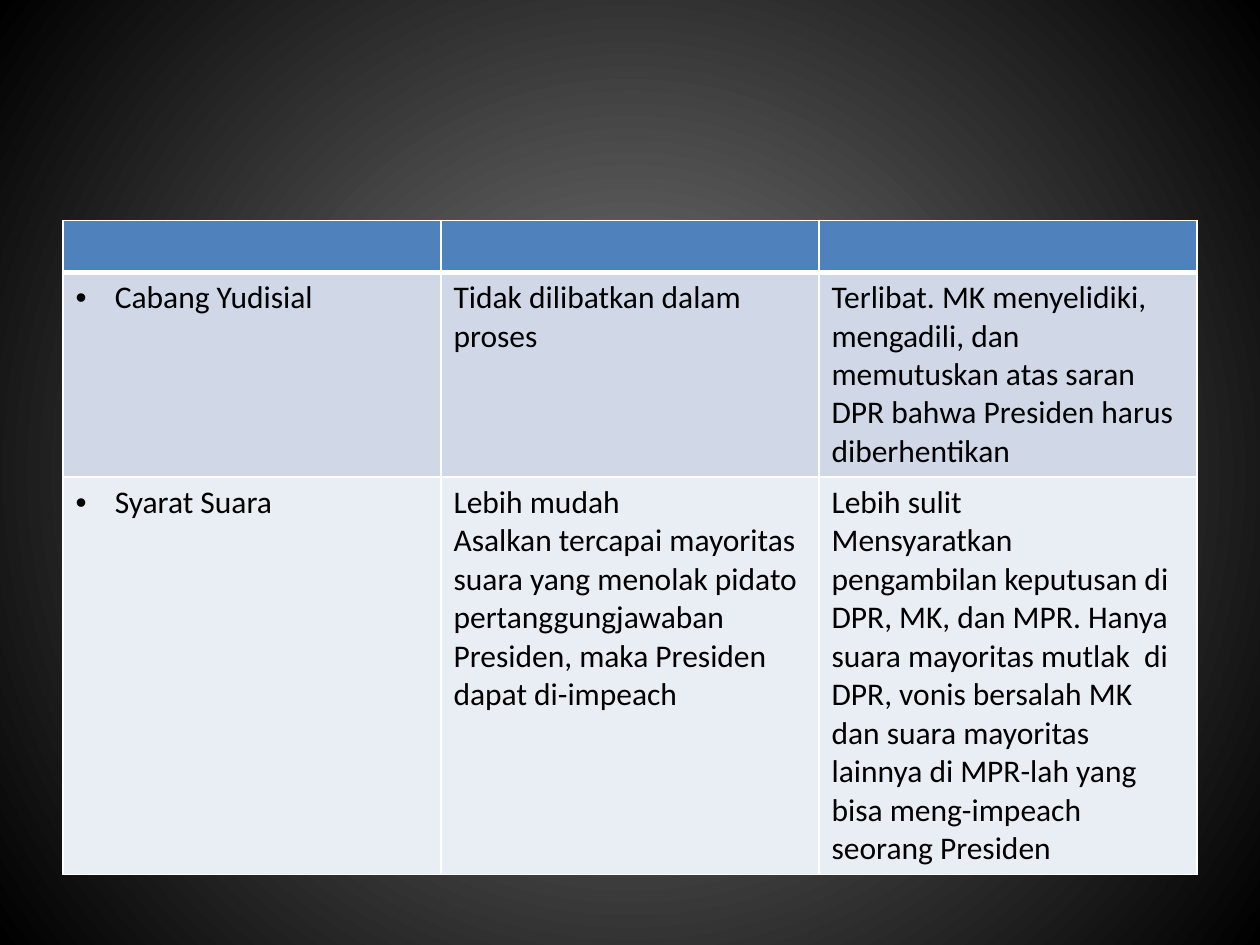
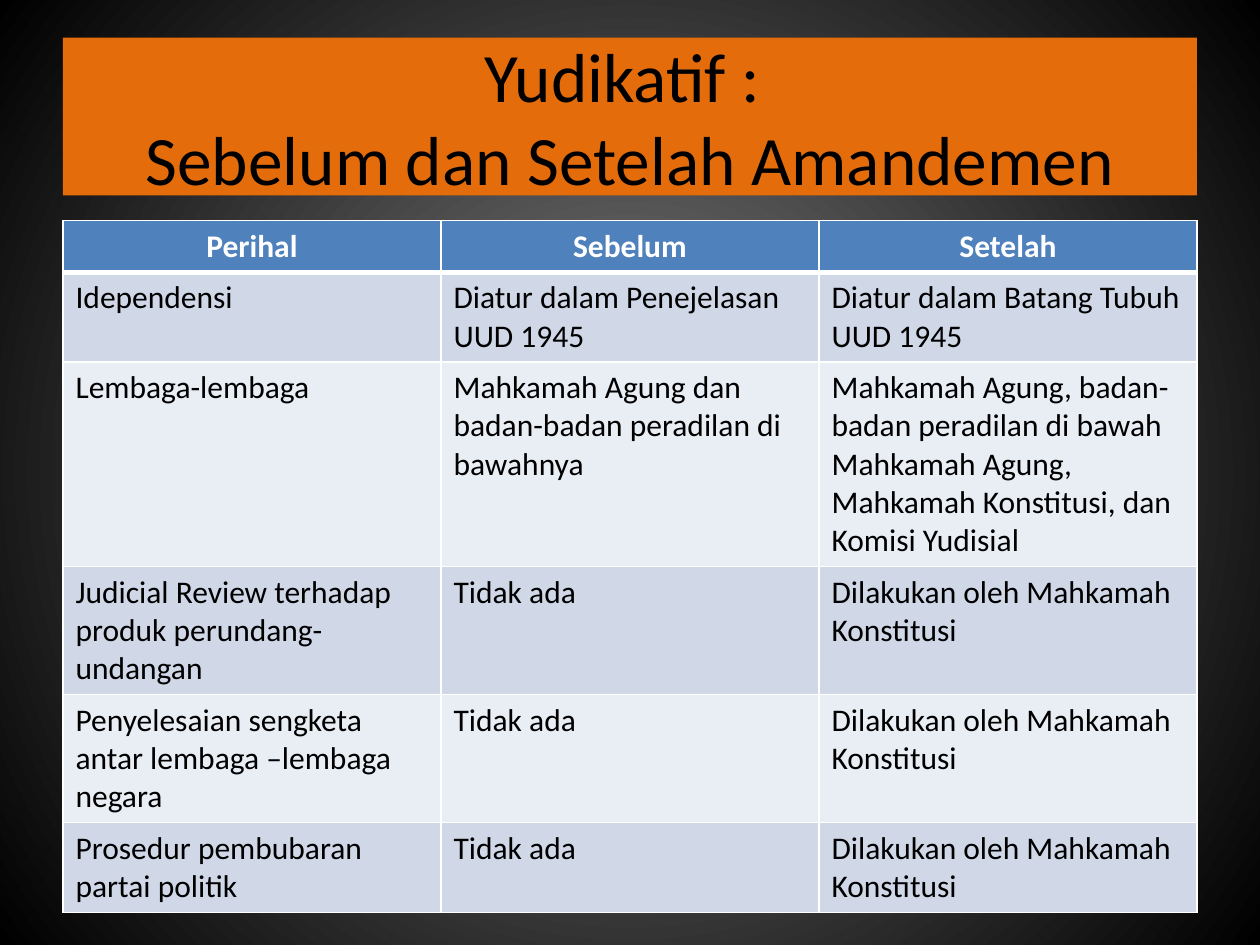
from lxml import etree
from pptx import Presentation
from pptx.dml.color import RGBColor
from pptx.enum.shapes import MSO_SHAPE
from pptx.enum.text import MSO_ANCHOR, PP_ALIGN
from pptx.oxml import parse_xml
from pptx.oxml.ns import nsdecls, qn
from pptx.util import Cm, Pt

RECTANGLE = MSO_SHAPE.RECTANGLE
MIDDLE = MSO_ANCHOR.MIDDLE
CENTER = PP_ALIGN.CENTER
LEFT = PP_ALIGN.LEFT

BLACK = RGBColor(0x00, 0x00, 0x00)
WHITE = RGBColor(0xFF, 0xFF, 0xFF)
GLOW_GRAY = RGBColor(0x7F, 0x7F, 0x7F)
TITLE_ORANGE = RGBColor(0xE4, 0x6C, 0x0A)
HEADER_BLUE = RGBColor(0x4F, 0x81, 0xBD)
BAND_COLORS = (RGBColor(0xD0, 0xD8, 0xE8), RGBColor(0xE9, 0xED, 0xF4))

FONT = "Calibri"
TITLE_SIZE = Pt(39.6)
TABLE_SIZE = Pt(18)
ROW_HEIGHT = Cm(1.04)
BULLET_INDENT = Cm(0.79)
TITLE_BOX = (Cm(1.27), Cm(0.76), Cm(22.86), Cm(3.18))
TABLE_BOX = (Cm(1.27), Cm(4.45), Cm(22.86))

IMPEACHMENT_ROWS = [
    ("", "", ""),
    ("Cabang Yudisial", "Tidak dilibatkan dalam proses",
     "Terlibat. MK menyelidiki, mengadili, dan memutuskan atas saran DPR "
     "bahwa Presiden harus diberhentikan"),
    ("Syarat Suara",
     "Lebih mudah\nAsalkan tercapai mayoritas suara yang menolak pidato "
     "pertanggungjawaban Presiden, maka Presiden dapat di-impeach",
     "Lebih sulit\nMensyaratkan  pengambilan keputusan di DPR, MK, dan MPR. "
     "Hanya suara mayoritas mutlak  di DPR, vonis bersalah MK dan suara "
     "mayoritas lainnya di MPR-lah yang bisa meng-impeach seorang Presiden"),
]

JUDICIARY_TITLE = "Yudikatif : \vSebelum dan Setelah Amandemen"
JUDICIARY_ROWS = [
    ("Perihal", "Sebelum", "Setelah"),
    ("Idependensi", "Diatur dalam Penejelasan UUD 1945",
     "Diatur dalam Batang Tubuh UUD 1945"),
    ("Lembaga-lembaga",
     "Mahkamah Agung dan badan-badan peradilan di bawahnya",
     "Mahkamah Agung, badan-badan peradilan di bawah Mahkamah Agung, "
     "Mahkamah Konstitusi, dan Komisi Yudisial"),
] + [
    (subject, "Tidak ada", "Dilakukan oleh Mahkamah Konstitusi")
    for subject in (
        "Judicial Review terhadap produk perundang-undangan",
        "Penyelesaian sengketa antar lembaga –lembaga negara",
        "Prosedur pembubaran partai politik",
    )
]


def format_paragraph(paragraph, size, color, alignment, bold=False):
    """Align a paragraph and style its runs."""
    paragraph.alignment = alignment
    for run in paragraph.runs:
        run.font.name = FONT
        run.font.size = size
        run.font.bold = bold
        run.font.color.rgb = color


def add_bullet(paragraph):
    """Give a paragraph a hanging round bullet."""
    properties = paragraph._p.get_or_add_pPr()
    properties.set("marL", str(BULLET_INDENT))
    properties.set("indent", str(-BULLET_INDENT))
    etree.SubElement(properties, qn("a:buFont")).set("typeface", "Arial")
    etree.SubElement(properties, qn("a:buChar")).set("char", "•")


def set_borders(cell, top, bottom):
    """Draw white cell borders with the given top and bottom widths in points."""
    properties = cell._tc.get_or_add_tcPr()
    for side, width in (("L", 1), ("R", 1), ("T", top), ("B", bottom)):
        properties.append(parse_xml(
            f'<a:ln{side} {nsdecls("a")} w="{Pt(width)}"><a:solidFill>'
            f'<a:srgbClr val="{WHITE}"/></a:solidFill></a:ln{side}>'))


def paint_background(slide):
    """Fill the slide with a radial glow from gray to black."""
    fill = slide.background.fill
    fill.gradient()
    for stop, color in zip(fill.gradient_stops, (GLOW_GRAY, BLACK)):
        stop.color.rgb = color
    gradient = slide.element.find(".//" + qn("a:gradFill"))
    gradient.replace(gradient.find(qn("a:lin")), parse_xml(
        f'<a:path {nsdecls("a")} path="circle"><a:fillToRect l="50000" '
        't="50000" r="50000" b="50000"/></a:path>'))


def add_title_band(slide, box, title):
    """Place the orange title band in the box."""
    band = slide.shapes.add_shape(RECTANGLE, *box)
    band.shadow.inherit = False
    band.fill.solid()
    band.fill.fore_color.rgb = TITLE_ORANGE
    band.line.fill.background()
    text_frame = band.text_frame
    text_frame.word_wrap = True
    text_frame.vertical_anchor = MIDDLE
    text_frame.text = title
    format_paragraph(text_frame.paragraphs[0], TITLE_SIZE, BLACK, CENTER)


def fill_cell(cell, text, row_index, bulleted):
    """Write and style one cell according to its row."""
    header = row_index == 0
    set_borders(cell, top=3 if row_index == 1 else 1, bottom=3 if header else 1)
    cell.fill.solid()
    cell.fill.fore_color.rgb = (
        HEADER_BLUE if header else BAND_COLORS[(row_index - 1) % 2])
    cell.text_frame.text = text
    for paragraph in cell.text_frame.paragraphs:
        if bulleted:
            add_bullet(paragraph)
        format_paragraph(paragraph, TABLE_SIZE, WHITE if header else BLACK,
                         CENTER if header else LEFT, bold=header)


def add_comparison_table(slide, box, rows, bulleted_subjects=False):
    """Place a banded table with equal columns in the box."""
    left, top, width = box
    frame = slide.shapes.add_table(
        len(rows), len(rows[0]), left, top, width, ROW_HEIGHT * len(rows))
    table = frame.table
    for row_index, texts in enumerate(rows):
        for column_index, text in enumerate(texts):
            bulleted = bulleted_subjects and row_index > 0 and column_index == 0
            fill_cell(table.cell(row_index, column_index), text, row_index, bulleted)


def add_comparison_slide(presentation, rows, title=None, bulleted_subjects=False):
    """Add a slide with a comparison table and an optional title band."""
    slide = presentation.slides.add_slide(presentation.slide_layouts[6])
    paint_background(slide)
    if title:
        add_title_band(slide, TITLE_BOX, title)
    add_comparison_table(slide, TABLE_BOX, rows, bulleted_subjects)


def main():
    """Build and save the presentation."""
    presentation = Presentation()
    presentation.slide_width = Cm(25.4)
    presentation.slide_height = Cm(19.05)
    add_comparison_slide(presentation, IMPEACHMENT_ROWS, bulleted_subjects=True)
    add_comparison_slide(presentation, JUDICIARY_ROWS, title=JUDICIARY_TITLE)
    presentation.save("out.pptx")


if __name__ == "__main__":
    main()
